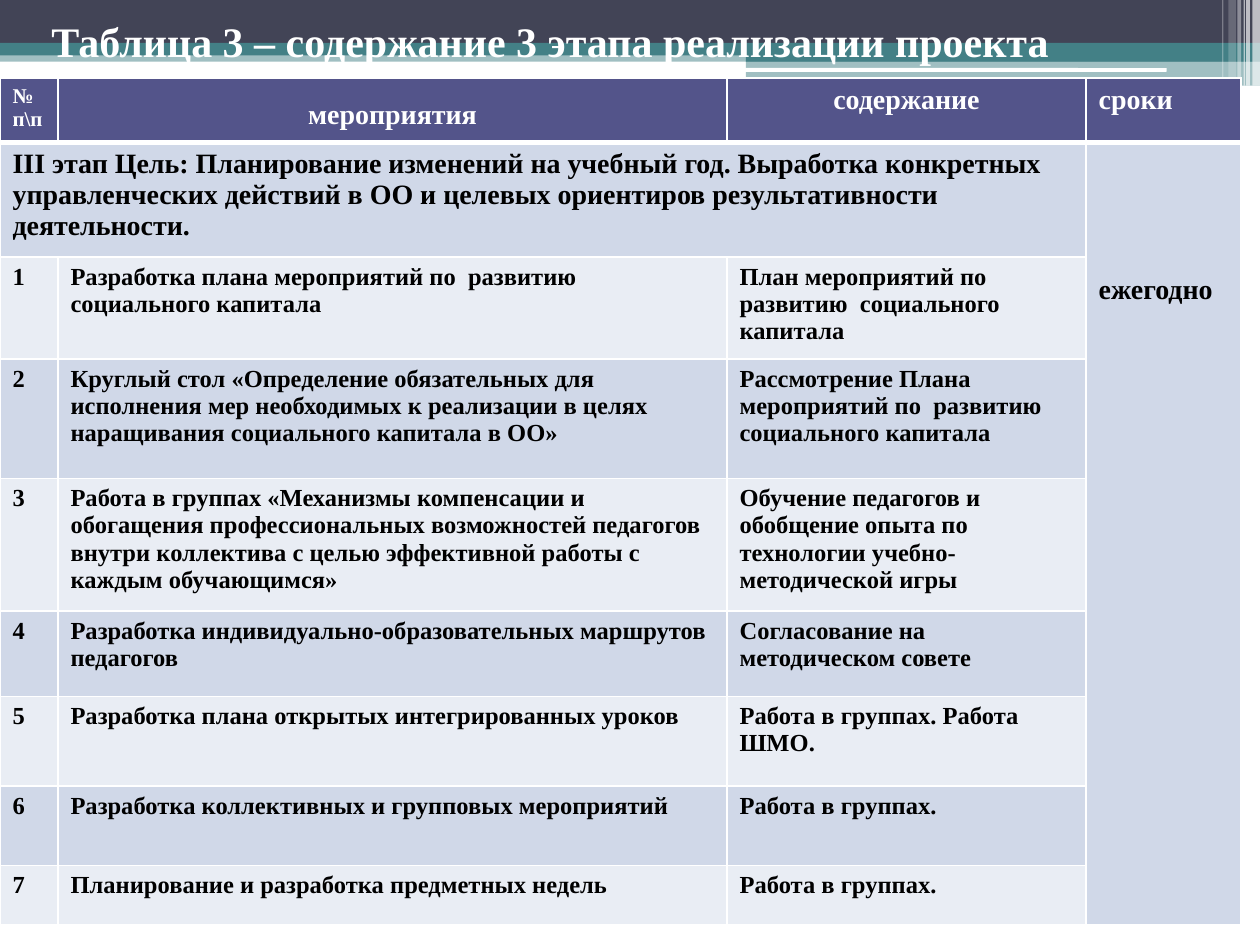
import lxml.etree
import pptx
import pptx.dml.color
import pptx.enum.shapes
import pptx.enum.text
import pptx.oxml.ns
import pptx.util

WHITE, BLACK = "FFFFFF", "000000"
DARK, TEAL, VIOLET = "424456", "438086", "53548A"
BANDS = ("D0D8E8", "E9EDF4")
CENTER = pptx.enum.text.PP_ALIGN.CENTER
RECTANGLE = pptx.enum.shapes.MSO_SHAPE.RECTANGLE
ROUNDED = pptx.enum.shapes.MSO_SHAPE.ROUNDED_RECTANGLE

# column, row, width, height, fill, opacity in percent
BANNER = [
    (0, 4, 100, 0.9, TEAL, 50),
    (0, 0, 100, 3.4, DARK, 100),
    (0, 3.4, 100, 1, TEAL, 100),
    (59.2, 3.9, 40.8, 1, TEAL, 100),
    (59.2, 4.8, 40.8, 2, TEAL, 50),
]
RULES = [(59.1, 5.4, 33.5, 0.3), (80.6, 6.4, 17.5, 0.4)]
# column, width, height, opacity in percent
STRIPES = [
    (99.4, 0.6, 6.8, 65), (98.9, 0.3, 6.8, 65), (98.7, 0.1, 6.8, 60),
    (98.2, 0.3, 6.8, 40), (97.5, 0.6, 6.4, 20), (97, 0.1, 6.4, 30),
]

COLUMN_WIDTHS = [4.6, 53.1, 28.5, 12.3]
ROW_HEIGHTS = [5.1, 9.1, 8.1, 9.5, 10.5, 6.8, 7.1, 6.3, 4.7]
HEADERS = ["№п\\п", "мероприятия", "содержание", "сроки"]
GOAL = ("III\u00a0этап\u00a0Цель: Планирование изменений на учебный год. Выработка "
        "конкретных управленческих действий в ОО и целевых ориентиров "
        "результативности деятельности.")
ACTIVITIES = [
    ("Разработка плана мероприятий по  развитию  социального капитала",
     "План мероприятий по  развитию  социального капитала"),
    ("Круглый стол «Определение обязательных для исполнения мер необходимых "
     "к реализации в целях наращивания социального капитала в ОО»",
     "Рассмотрение Плана  мероприятий по  развитию  социального капитала"),
    ("Работа в группах «Механизмы компенсации и обогащения профессиональных "
     "возможностей педагогов внутри коллектива с целью эффективной работы "
     "с каждым обучающимся»",
     "Обучение педагогов и обобщение опыта по технологии учебно-методической игры"),
    ("Разработка индивидуально-образовательных маршрутов педагогов",
     "Согласование на методическом совете"),
    ("Разработка плана открытых интегрированных уроков",
     "Работа в группах. Работа ШМО."),
    ("Разработка коллективных и групповых мероприятий", "Работа в группах."),
    ("Планирование и разработка предметных недель", "Работа в группах."),
]


def color(hex_string):
    return pptx.dml.color.RGBColor.from_string(hex_string)


class SlideBuilder:
    """Places elements on a grid of 100 columns by 75 rows."""

    font_name = "Times New Roman"

    def __init__(self, presentation):
        self.slide = presentation.slides.add_slide(presentation.slide_layouts[6])
        self.unit = presentation.slide_width / 100

    def grid(self, *cells):
        return [pptx.util.Emu(round(cell * self.unit)) for cell in cells]

    def fill(self, target, hex_string, opacity=100):
        target.fill.solid()
        target.fill.fore_color.rgb = color(hex_string)
        if opacity < 100:
            value = target.fill._xPr.find(".//" + pptx.oxml.ns.qn("a:srgbClr"))
            alpha = lxml.etree.SubElement(value, pptx.oxml.ns.qn("a:alpha"))
            alpha.set("val", str(opacity * 1000))

    def block(self, column, row, width, height, hex_string, opacity=100, kind=RECTANGLE):
        shape = self.slide.shapes.add_shape(kind, *self.grid(column, row, width, height))
        shape.shadow.inherit = False
        shape.line.fill.background()
        self.fill(shape, hex_string, opacity)

    def set_text(self, text_frame, text, size, hex_string, alignment=None):
        text_frame.text = text
        paragraph = text_frame.paragraphs[0]
        paragraph.alignment = alignment
        for run in paragraph.runs:
            run.font.name = self.font_name
            run.font.size = pptx.util.Pt(size)
            run.font.bold = True
            run.font.color.rgb = color(hex_string)
        return paragraph

    def title(self, column, row, width, height, text):
        shape = self.slide.shapes.add_textbox(*self.grid(column, row, width, height))
        shape.text_frame.word_wrap = True
        shape.text_frame.vertical_anchor = pptx.enum.text.MSO_ANCHOR.MIDDLE
        self.set_text(shape.text_frame, text, 24, WHITE)

    def table(self, column, row, widths, heights):
        frame = self.slide.shapes.add_table(
            len(heights), len(widths),
            *self.grid(column, row, sum(widths), sum(heights)))
        for table_column, width in zip(frame.table.columns, self.grid(*widths)):
            table_column.width = width
        for table_row, height in zip(frame.table.rows, self.grid(*heights)):
            table_row.height = height
        return frame.table

    def borders(self, cell, **widths):
        properties = cell._tc.get_or_add_tcPr()
        for side in "LRTB":
            line = lxml.etree.SubElement(properties, pptx.oxml.ns.qn("a:ln" + side))
            line.set("w", str(pptx.util.Pt(widths.get(side, 1))))
            paint = lxml.etree.SubElement(line, pptx.oxml.ns.qn("a:solidFill"))
            lxml.etree.SubElement(paint, pptx.oxml.ns.qn("a:srgbClr")).set("val", WHITE)


def add_banner(builder):
    for block in BANNER:
        builder.block(*block)
    for rule in RULES:
        builder.block(*rule, WHITE, kind=ROUNDED)
    for column, width, height, opacity in STRIPES:
        builder.block(column, 0, width, height, WHITE, opacity)


def add_plan(builder):
    table = builder.table(0, 6.2, COLUMN_WIDTHS, ROW_HEIGHTS)
    last_row, last_column = len(ROW_HEIGHTS) - 1, len(COLUMN_WIDTHS) - 1
    for row in range(last_row + 1):
        for column in range(last_column + 1):
            cell = table.cell(row, column)
            builder.borders(cell, **({"B": 3} if row == 0 else {"T": 3} if row == 1 else {}))
            band = BANDS[0] if column == last_column else BANDS[(row + 1) % 2]
            builder.fill(cell, VIOLET if row == 0 else band)
    table.cell(1, 0).merge(table.cell(1, last_column - 1))
    table.cell(1, last_column).merge(table.cell(last_row, last_column))

    for column, header in enumerate(HEADERS):
        paragraph = builder.set_text(
            table.cell(0, column).text_frame, header, 12 if column == 0 else 16,
            WHITE, CENTER if column in (1, 2) else None)
        if column == 1:
            paragraph.line_spacing = 1.5
    builder.set_text(table.cell(1, 0).text_frame, GOAL, 16, BLACK)
    period = table.cell(1, last_column)
    period.margin_top = builder.grid(10.5)[0]
    builder.set_text(period.text_frame, "ежегодно", 16, BLACK)
    for number, activity in enumerate(ACTIVITIES, 1):
        for column, text in enumerate((str(number), *activity)):
            builder.set_text(table.cell(number + 1, column).text_frame, text, 14, BLACK)


def main():
    presentation = pptx.Presentation()
    presentation.slide_width = pptx.util.Inches(10)
    presentation.slide_height = pptx.util.Inches(7.5)
    builder = SlideBuilder(presentation)
    add_banner(builder)
    builder.title(3.1, 0, 95, 6.4, "Таблица 3 – содержание 3 этапа реализации проекта")
    add_plan(builder)
    presentation.save("out.pptx")


if __name__ == "__main__":
    main()
